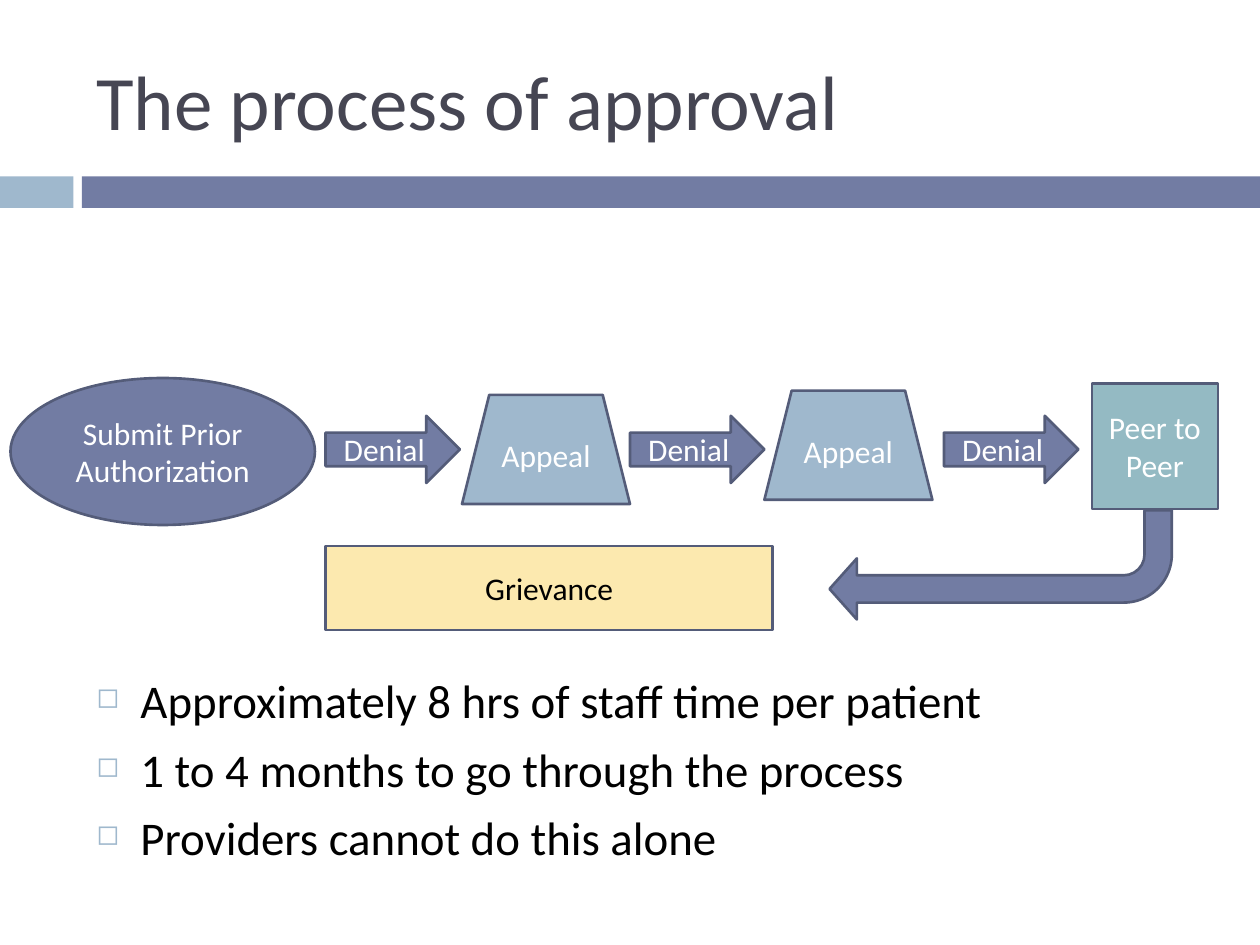
import dataclasses

import lxml.etree
import pptx
import pptx.dml.color
import pptx.enum.shapes
import pptx.enum.text
import pptx.oxml.ns
import pptx.util

RGB = pptx.dml.color.RGBColor
SHAPE = pptx.enum.shapes.MSO_SHAPE
ALIGN = pptx.enum.text.PP_ALIGN
ANCHOR = pptx.enum.text.MSO_ANCHOR
Pt = pptx.util.Pt

INDIGO = RGB(0x72, 0x7C, 0xA3)
OUTLINE = RGB(0x54, 0x5C, 0x79)
SKY = RGB(0x9F, 0xB8, 0xCD)
TEAL = RGB(0x94, 0xBA, 0xC3)
CREAM = RGB(0xFC, 0xE9, 0xAF)
SLATE = RGB(0x46, 0x46, 0x53)
WHITE = RGB(0xFF, 0xFF, 0xFF)
BLACK = RGB(0, 0, 0)

# The slide is a grid of 120 columns by 90 rows
CELL = pptx.util.Inches(1 / 12)
COLS, ROWS = 120, 90
INDENT = pptx.util.Inches(0.35)


@dataclasses.dataclass
class Box:
    """A place on the grid, in columns and rows."""
    col: float
    row: float
    cols: float
    rows: float

    def emu(self) -> list[int]:
        return [round(n * CELL) for n in dataclasses.astuple(self)]


@dataclasses.dataclass
class Step:
    """One shape of the flow."""
    kind: SHAPE
    box: Box
    fill: RGB
    text: str = ""
    color: RGB = WHITE
    rotation: int = 0
    adjustments: tuple = ()
    outlined: bool = True


def set_attrs(obj, values: dict) -> None:
    for name, value in values.items():
        setattr(obj, name, value)


def write(p, text: str, size: float, color: RGB) -> None:
    r = p.add_run()
    r.text = text
    set_attrs(r.font, {"name": "Calibri", "size": Pt(size)})
    r.font.color.rgb = color


def draw_step(s, step: Step) -> None:
    sp = s.shapes.add_shape(step.kind, *step.box.emu())
    sp.shadow.inherit = False
    sp.rotation = step.rotation
    for i, value in enumerate(step.adjustments):
        sp.adjustments[i] = value
    sp.fill.solid()
    sp.fill.fore_color.rgb = step.fill
    if step.outlined:
        sp.line.color.rgb = OUTLINE
        sp.line.width = Pt(1.5)
    else:
        sp.line.fill.background()
    if step.text:
        tf = sp.text_frame
        set_attrs(tf, {"word_wrap": True, "vertical_anchor": ANCHOR.MIDDLE})
        tf.paragraphs[0].alignment = ALIGN.CENTER
        write(tf.paragraphs[0], step.text, 18, step.color)


def add_text(s, box: Box, anchor: ANCHOR):
    tf = s.shapes.add_textbox(*box.emu()).text_frame
    set_attrs(tf, {"word_wrap": True, "vertical_anchor": anchor})
    return tf


def add_bullet(p, color: RGB) -> None:
    pPr = p._p.get_or_add_pPr()
    pPr.set("marL", str(INDENT))
    pPr.set("indent", str(-INDENT))
    qn = pptx.oxml.ns.qn
    clr = lxml.etree.SubElement(pPr, qn("a:buClr"))
    lxml.etree.SubElement(clr, qn("a:srgbClr"), val=str(color))
    lxml.etree.SubElement(pPr, qn("a:buSzPct"), val="60000")
    lxml.etree.SubElement(pPr, qn("a:buChar"), char="◻")


BARS = [
    Step(SHAPE.RECTANGLE, Box(0, 16.8, 7, 3), SKY, outlined=False),
    Step(SHAPE.RECTANGLE, Box(7.8, 16.8, COLS - 7.8, 3), INDIGO, outlined=False),
]
DENIALS = [Step(SHAPE.RIGHT_ARROW, Box(col, 39.6, 12.8, 6.4), INDIGO, "Denial")
           for col in (31, 60, 89.9)]
APPEALS = [Step(SHAPE.TRAPEZOID, Box(col, row, 16, 10.4), SKY, "Appeal")
           for col, row in ((44, 37.6), (72.8, 37.2))]
FLOW = [
    Step(SHAPE.OVAL, Box(1, 36, 29, 14), INDIGO, "Submit Prior Authorization"),
    *DENIALS,
    Step(SHAPE.RECTANGLE, Box(104, 36.5, 12, 12), TEAL, "Peer to Peer"),
    *APPEALS,
    Step(SHAPE.BENT_ARROW, Box(79, 48.6, 32.6, 10.4), INDIGO, rotation=180,
         adjustments=(0.25, 0.28, 0.25, 0.44)),
    Step(SHAPE.RECTANGLE, Box(31, 52, 42.6, 8), CREAM, "Grievance", BLACK),
]
POINTS = [
    "Approximately 8 hrs of staff time per patient",
    "1 to 4 months to go through the process",
    "Providers cannot do this alone",
]


def main() -> None:
    prs = pptx.Presentation()
    set_attrs(prs, {"slide_width": COLS * CELL, "slide_height": ROWS * CELL})
    s = prs.slides.add_slide(prs.slide_layouts[6])

    # Band under the title
    for bar in BARS:
        draw_step(s, bar)

    # Title
    tf = add_text(s, Box(8, 3, 107, 13), ANCHOR.MIDDLE)
    write(tf.paragraphs[0], "The process of approval", 44, SLATE)

    # Bullet points
    tf = add_text(s, Box(8, 63.4, 107, 16.7), ANCHOR.TOP)
    for i, point in enumerate(POINTS):
        p = tf.add_paragraph() if i else tf.paragraphs[0]
        p.space_before = Pt(7)
        add_bullet(p, SKY)
        write(p, point, 26.8, BLACK)

    # Approval flow
    for step in FLOW:
        draw_step(s, step)

    prs.save("out.pptx")


if __name__ == "__main__":
    main()
